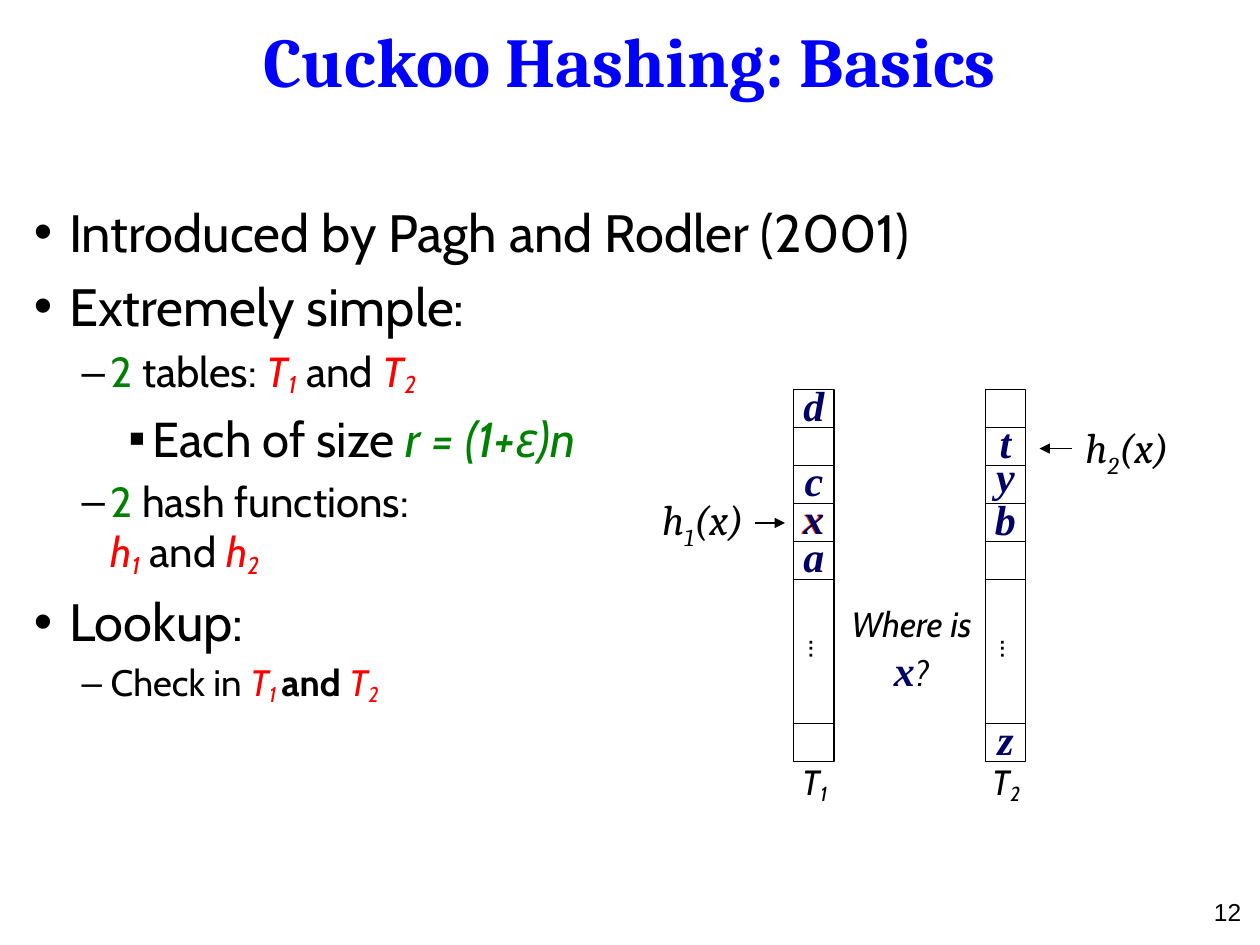
"""Build the slide on the basics of cuckoo hashing."""
from dataclasses import dataclass

from lxml import etree
from pptx import Presentation
from pptx.dml.color import RGBColor
from pptx.enum.shapes import MSO_CONNECTOR, MSO_SHAPE
from pptx.enum.text import MSO_ANCHOR, PP_ALIGN
from pptx.oxml.ns import qn
from pptx.util import Inches, Pt

LEFT, CENTER, RIGHT = PP_ALIGN.LEFT, PP_ALIGN.CENTER, PP_ALIGN.RIGHT
MIDDLE = MSO_ANCHOR.MIDDLE
RECTANGLE, STRAIGHT = MSO_SHAPE.RECTANGLE, MSO_CONNECTOR.STRAIGHT
BLACK, BLUE, GREEN, RED = "000000", "0000FF", "008000", "FF0000"
NAVY, ORANGE = "000066", "FF3300"
ROW_TOP, ROW_HEIGHT, CELL_WIDTH = 3.09, 0.302, 0.32
GAP_ROW, GAP_HEIGHT, LAST_TOP = 5, 1.14, 5.74


@dataclass(frozen=True)
class Span:
    text: str
    color: str = BLACK
    size: float = 24
    face: str = "Cabin"
    bold: bool = False
    italic: bool = False
    baseline: int = 0


@dataclass(frozen=True)
class Bullet:
    level: int
    spans: list[Span]


@dataclass(frozen=True)
class HashTable:
    left: float
    index: str
    keys: dict[float, str]


@dataclass(frozen=True)
class HashCall:
    index: str
    left: float
    top: float
    width: float
    arrow_start: float
    arrow_end: float
    arrow_y: float


def symbol(letter: str, index: str, size: float = 24, color: str = RED,
           face: str = "Cabin", drop: int = -15) -> list[Span]:
    """Return an italic letter with a subscript."""
    return [Span(letter, color, size, face, italic=True),
            Span(index, color, size, face, italic=True, baseline=drop)]


def key(letter: str, color: str = NAVY) -> Span:
    """Return a stored key as a span."""
    return Span(letter, color, 24, "Times New Roman", True, True)


LEVELS = [("•", 0.28, -0.28), ("–", 0.61, -0.23), ("▪", 0.94, -0.19)]
BULLETS = [
    Bullet(0, [Span("Introduced by Pagh and Rodler (2001)", size=30)]),
    Bullet(0, [Span("Extremely simple:", size=30)]),
    Bullet(1, [Span("2", GREEN), Span(" tables: "), *symbol("T", "1"),
               Span(" and "), *symbol("T", "2")]),
    Bullet(2, [Span("Each of size ", size=28),
               Span("r = (1+ε)n", GREEN, 28, italic=True)]),
    Bullet(1, [Span("2", GREEN), Span(" hash functions: "), Span("\n"),
               *symbol("h", "1"), Span(" and "), *symbol("h", "2")]),
    Bullet(0, [Span("Lookup:", size=30)]),
    Bullet(1, [Span("Check in ", size=21), *symbol("T", "1 ", 21),
               Span("and ", size=21, bold=True), *symbol("T", "2", 21)]),
]
TABLES = [
    HashTable(6.3, "1", {3.09: "d", 3.69: "c", 3.99: "x", 4.29: "a"}),
    HashTable(7.82, "2", {3.39: "t", 3.66: "y", 4: "b", LAST_TOP: "z"}),
]
CALLS = [HashCall("1", 5.11, 3.87, 0.94, 5.99, 6.23, 4.15),
         HashCall("2", 8.44, 3.3, 1.01, 8.51, 8.25, 3.56)]


def rgb(color: str) -> RGBColor:
    """Turn a hex string into a colour."""
    return RGBColor.from_string(color)


def write(para, spans: list[Span], align=CENTER) -> None:
    """Fill a paragraph with formatted spans."""
    para.alignment = align
    for item in spans:
        if item.text == "\n":
            para.add_line_break()
            continue
        span = para.add_run()
        span.text = item.text
        values = {"name": item.face, "size": Pt(item.size),
                  "bold": item.bold, "italic": item.italic}
        for name, value in values.items():
            setattr(span.font, name, value)
        span.font.color.rgb = rgb(item.color)
        if item.baseline:
            span._r.get_or_add_rPr().set("baseline", str(item.baseline * 1000))


def add_text(shapes, left: float, top: float, width: float, height: float,
             spans: list[Span], align=CENTER, side: float = 0):
    """Add a wrapping text box holding one paragraph."""
    box = shapes.add_textbox(*map(Inches, (left, top, width, height)))
    frame = box.text_frame
    settings = {"word_wrap": True, "margin_left": Inches(side),
                "margin_right": Inches(side)}
    for name, value in settings.items():
        setattr(frame, name, value)
    write(frame.paragraphs[0], spans, align)
    return box


def add_bullets(shapes, bullets: list[Bullet]) -> None:
    """Add the bulleted body text."""
    frame = add_text(shapes, 0.17, 1.54, 7.24, 4.76, [], LEFT, 0.1).text_frame
    for number, bullet in enumerate(bullets):
        para = frame.add_paragraph() if number else frame.paragraphs[0]
        para.level = bullet.level
        para.space_before = Pt(bullet.spans[0].size * 0.2)
        write(para, bullet.spans, LEFT)
        mark, margin, indent = LEVELS[bullet.level]
        properties = para._p.get_or_add_pPr()
        properties.set("marL", str(Inches(margin)))
        properties.set("indent", str(Inches(indent)))
        color = etree.SubElement(properties, qn("a:buClr"))
        etree.SubElement(color, qn("a:srgbClr"), val=BLACK)
        etree.SubElement(properties, qn("a:buFont"), typeface="Arial")
        etree.SubElement(properties, qn("a:buChar"), char=mark)


def add_cell(shapes, left: float, top: float, height: float) -> None:
    """Add one outlined cell."""
    cell = shapes.add_shape(RECTANGLE, *map(Inches, (left, top, CELL_WIDTH, height)))
    cell.shadow.inherit = False
    cell.fill.background()
    cell.line.color.rgb = rgb(BLACK)
    cell.line.width = Pt(0.75)


def add_hash_table(page, table: HashTable) -> None:
    """Add a column of cells with its ellipsis and name."""
    shapes = page.shapes.add_group_shape().shapes
    for row in range(GAP_ROW):
        add_cell(shapes, table.left, ROW_TOP + row * ROW_HEIGHT, ROW_HEIGHT)
    add_cell(shapes, table.left, ROW_TOP + GAP_ROW * ROW_HEIGHT, GAP_HEIGHT)
    add_cell(shapes, table.left, LAST_TOP, ROW_HEIGHT)
    dots = add_text(shapes, table.left + 0.01, 4.95, 0.43, 0.4, [Span("...", size=18)])
    dots.rotation = 90
    add_text(shapes, table.left - 0.06, 5.99, 0.45, 0.43,
             symbol("T", table.index, 20, BLACK))


def add_keys(shapes, table: HashTable) -> None:
    """Add the keys stored in a table."""
    for top, letter in table.keys.items():
        add_text(shapes, table.left - 0.02, top - 0.13, 0.36, 0.5, [key(letter)])


def add_call(shapes, call: HashCall) -> None:
    """Add a hash function label and its arrow."""
    spans = symbol("h", call.index, 24, BLACK, "Cambria", -25)
    spans.append(Span("(x)", face="Cambria", italic=True))
    add_text(shapes, call.left, call.top, call.width, 0.5, spans)
    arrow = shapes.add_connector(STRAIGHT, *map(Inches, (
        call.arrow_start, call.arrow_y, call.arrow_end, call.arrow_y)))
    arrow.line.color.rgb = rgb(BLACK)
    arrow.line.width = Pt(0.75)
    etree.SubElement(arrow.line._get_or_add_ln(), qn("a:tailEnd"), type="triangle")
    etree.SubElement(arrow._element.spPr, qn("a:effectLst"))


def main() -> None:
    """Build and save the deck."""
    deck = Presentation()
    deck.slide_width, deck.slide_height = Inches(10), Inches(7.5)
    page = deck.slides.add_slide(deck.slide_layouts[5])
    shapes = page.shapes
    title = shapes.title
    place = {"left": 0.5, "top": 0.11, "width": 9, "height": 0.72}
    for name, value in place.items():
        setattr(title, name, Inches(value))
    title.text_frame.vertical_anchor = MIDDLE
    write(title.text_frame.paragraphs[0],
          [Span("Cuckoo Hashing: Basics", BLUE, 40, "Cambria", True)])
    add_text(shapes, 7.62, 7.07, 2.33, 0.28, [Span("12", size=14, face="Arial")],
             RIGHT, 0.1)
    add_bullets(shapes, BULLETS)
    for table in TABLES:
        add_hash_table(page, table)
    for call in CALLS:
        add_call(shapes, call)
    add_text(shapes, 6.27, 3.86, 0.36, 0.5, [key("x", ORANGE)])
    for table in TABLES:
        add_keys(shapes, table)
    add_text(shapes, 6.63, 4.73, 1.21, 0.83, [
        Span("Where is ", size=20, italic=True), key("x"),
        Span("?", size=20, italic=True)], side=0.1)
    deck.save("out.pptx")


if __name__ == "__main__":
    main()
